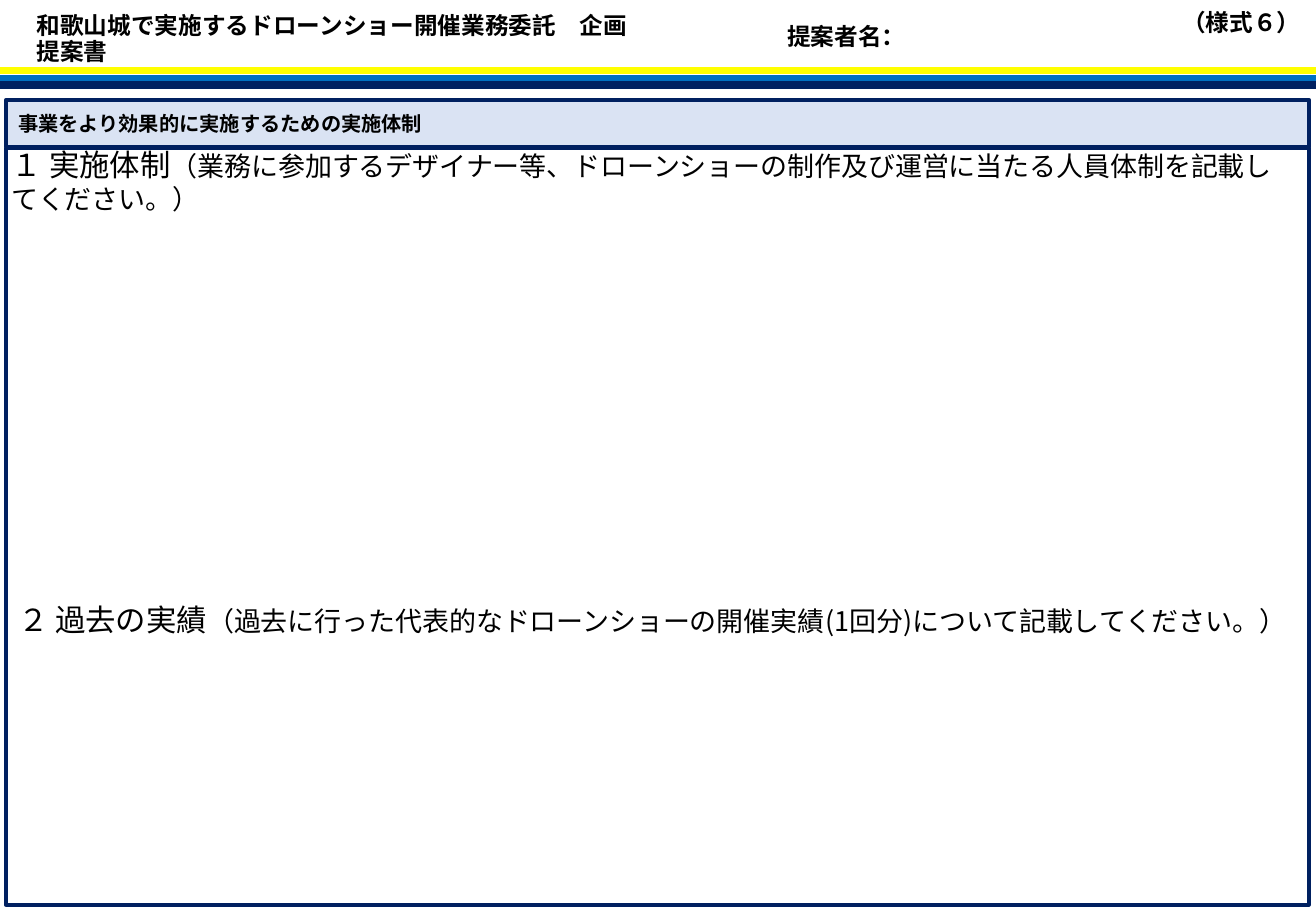
from lxml.etree import SubElement
from pptx import Presentation
from pptx.dml.color import RGBColor
from pptx.enum.shapes import MSO_CONNECTOR, MSO_SHAPE
from pptx.enum.text import MSO_ANCHOR, MSO_AUTO_SIZE, PP_ALIGN
from pptx.oxml.ns import qn
from pptx.util import Inches, Pt

WIDTH, HEIGHT = 10.83, 7.5
FONT = "Noto Sans CJK JP"
BLACK = RGBColor(0x00, 0x00, 0x00)
WHITE = RGBColor(0xFF, 0xFF, 0xFF)
YELLOW = RGBColor(0xFF, 0xFF, 0x00)
BLUE = RGBColor(0x00, 0x70, 0xC0)
NAVY = RGBColor(0x00, 0x20, 0x60)
PALE_BLUE = RGBColor(0xDA, 0xE3, 0xF3)

# Header bands: height on the page, colour, thickness in points
BANDS = [(0.58, YELLOW, 4.5), (0.65, BLUE, 5), (0.7, NAVY, 4.75)]

# Form sections: left, top, heading, instruction
SECTIONS = [
    (0, 1.36, "１ 実施体制",
     "（業務に参加するデザイナー等、ドローンショーの制作及び運営に当たる人員体制を記載してください。）"),
    (0.05, 4.97, "２ 過去の実績",
     "（過去に行った代表的なドローンショーの開催実績(1回分)について記載してください。）"),
]


def write(shape, spans, bold=False, spacing=1.0):
    """Fill a shape with one left-aligned paragraph of (text, size) spans."""
    frame = shape.text_frame
    frame.word_wrap = True
    frame.auto_size = MSO_AUTO_SIZE.NONE
    frame.vertical_anchor = MSO_ANCHOR.MIDDLE
    para = frame.paragraphs[0]
    para.alignment = PP_ALIGN.LEFT
    para.line_spacing = spacing
    para.font.bold = bold
    para.font.color.rgb = BLACK
    para.font.name = FONT
    # Japanese glyphs take the East Asian typeface
    defaults = para._p.pPr.find(qn("a:defRPr"))
    SubElement(defaults, qn("a:ea")).set("typeface", FONT)
    for text, size in spans:
        span = para.add_run()
        span.text = text
        span.font.size = Pt(size)


def add_text(page, box, spans, **style):
    write(page.shapes.add_textbox(*map(Inches, box)), spans, **style)


def add_panel(page, box, fill):
    panel = page.shapes.add_shape(MSO_SHAPE.RECTANGLE, *map(Inches, box))
    panel.shadow.inherit = False
    panel.fill.solid()
    panel.fill.fore_color.rgb = fill
    panel.line.color.rgb = NAVY
    panel.line.width = Pt(2.25)
    return panel


def add_header(page):
    # Coloured bands across the page
    for top, color, thickness in BANDS:
        band = page.shapes.add_connector(
            MSO_CONNECTOR.STRAIGHT, 0, Inches(top), Inches(WIDTH), Inches(top))
        band.line.color.rgb = color
        band.line.width = Pt(thickness)
        SubElement(band._element.spPr, qn("a:effectLst"))

    # Document title, proposer and form number
    style = {"bold": True, "spacing": 0.9}
    title = page.shapes.title
    title.left, title.top, title.width, title.height = map(
        Inches, (0.2, 0.07, 5.09, 0.52))
    write(title, [("和歌山城で実施するドローンショー開催業務委託　企画提案書", 14)], **style)
    add_text(page, (6.38, 0.05, 2.5, 0.52), [("提案者名：", 14)], **style)
    add_text(page, (9.63, -0.06, 1.2, 0.52), [("（様式６）", 14)], **style)


def add_form(page, box):
    left, top, width, height = box
    heading_height = 0.39
    # Answer area under its heading bar
    add_panel(page, (left, top + heading_height + 0.01, width,
                     height - heading_height - 0.01), WHITE)
    heading = add_panel(page, (left, top, width, heading_height), PALE_BLUE)
    write(heading, [("事業をより効果的に実施するための実施体制", 12)], bold=True)
    # Numbered prompts
    for section_left, section_top, name, instruction in SECTIONS:
        add_text(page, (section_left, section_top, width, 0.26),
                 [(name, 18), (instruction, 16)])


def main():
    deck = Presentation()
    deck.slide_width, deck.slide_height = Inches(WIDTH), Inches(HEIGHT)
    page = deck.slides.add_slide(deck.slide_layouts[5])
    add_header(page)
    add_form(page, (0.05, 0.82, 10.72, 6.63))
    deck.save("out.pptx")


if __name__ == "__main__":
    main()
